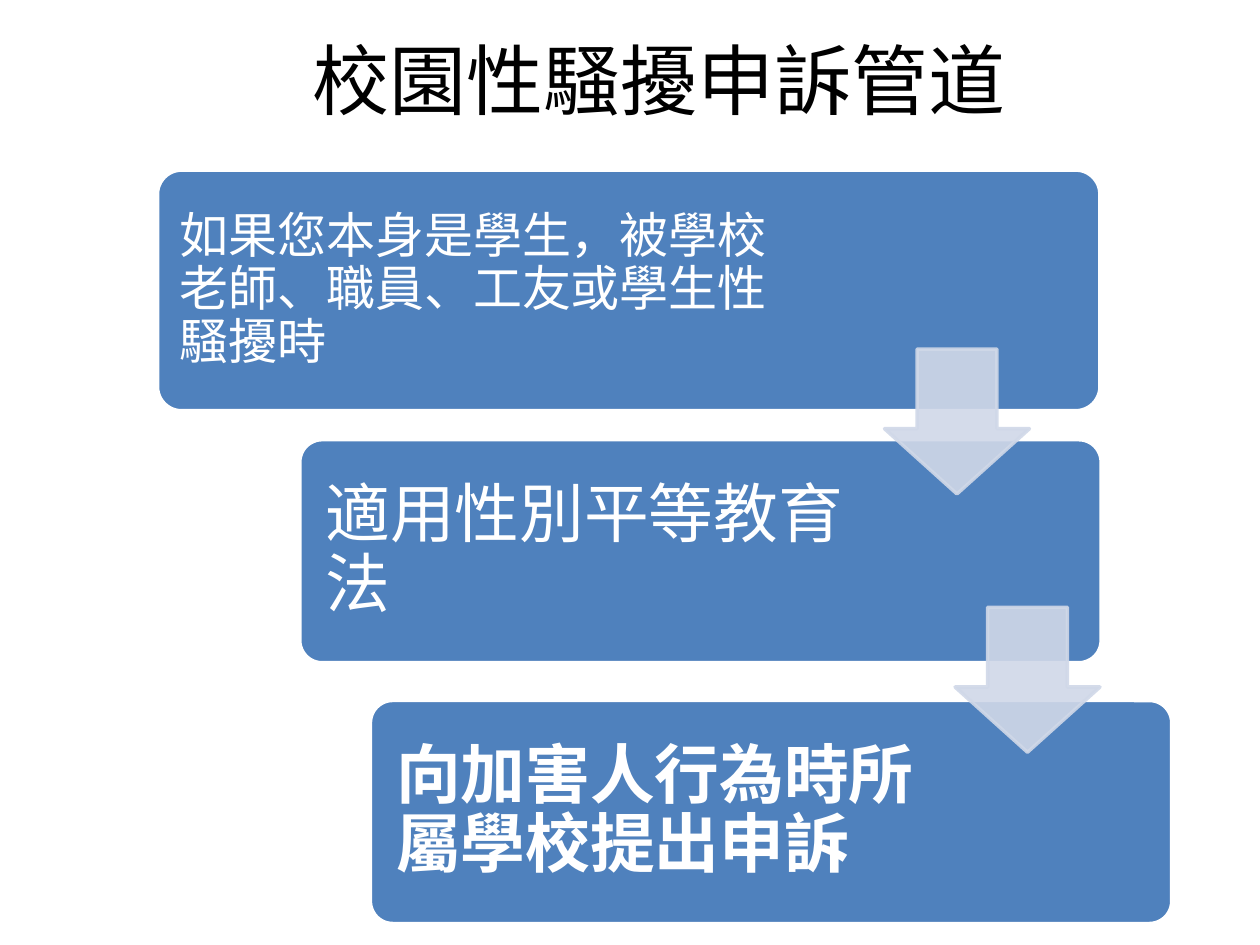
import pptx
import pptx.util
import pptx.dml.color
import pptx.enum.shapes
import pptx.enum.text
import pptx.oxml
import pptx.oxml.ns
import lxml.etree

COLUMNS, ROWS = 100, 75
CELL = pptx.util.Inches(0.1)
FONT = "Noto Sans CJK SC"
COLOURS = {"title": "000000", "step": "4F81BD", "white": "FFFFFF", "arrow": "D0D8E8"}
ARROW_SIZE = 11.5
TEXT_MARGIN = 0.55

STEPS = [
    {"text": "如果您本身是學生，被學校老師、職員、工友或學生性騷擾時",
     "area": (12.5, 13.5, 74.8, 19.1), "text_width": 52.4, "size": 28, "inset": 1.2, "bold": False},
    {"text": "適用性別平等教育法",
     "area": (23.8, 34.9, 63.6, 17.7), "text_width": 45.4, "size": 37, "inset": 1.5, "bold": False},
    {"text": "向加害人行為時所屬學校提出申訴",
     "area": (29.4, 55.6, 63.6, 17.7), "text_width": 45.4, "size": 37, "inset": 1.5, "bold": True},
]
ARROWS = [(70.2, 27.7), (75.8, 48.2)]


def grid(*cells):
    return [round(cell * CELL) for cell in cells]


def colour(name):
    return pptx.dml.color.RGBColor.from_string(COLOURS[name])


def format_text(para, size, colour_name, bold=False):
    for span in para.runs:
        span.font.size = pptx.util.Pt(size)
        span.font.name = FONT
        span.font.bold = bold
        span.font.color.rgb = colour(colour_name)
        east_asian = lxml.etree.Element(pptx.oxml.ns.qn("a:ea"), typeface=FONT)
        span.font._element.find(pptx.oxml.ns.qn("a:latin")).addnext(east_asian)


def set_opacity(shape, percent):
    for fill in shape._element.spPr.iter(pptx.oxml.ns.qn("a:srgbClr")):
        lxml.etree.SubElement(fill, pptx.oxml.ns.qn("a:alpha"), val=str(percent * 1000))


def add_title(page, text):
    title = page.shapes.title
    title.left, title.top, title.width, title.height = grid(9.8, 0, 85, 12.5)
    title.text_frame.text = text
    title.text_frame.vertical_anchor = pptx.enum.text.MSO_ANCHOR.MIDDLE
    para = title.text_frame.paragraphs[0]
    para.alignment = pptx.enum.text.PP_ALIGN.CENTER
    format_text(para, 44, "title")


def add_preset(group, preset, area, adjustments, fill_name, line_name):
    shape = group.shapes.add_shape(preset, *grid(*area))
    shape.shadow.inherit = False
    for index, value in enumerate(adjustments):
        shape.adjustments[index] = value
    shape.fill.solid()
    shape.fill.fore_color.rgb = colour(fill_name)
    shape.line.color.rgb = colour(line_name)
    shape.line.width = pptx.util.Pt(2)
    return shape


def add_step(group, step):
    left, top, width, height = step["area"]
    add_preset(group, pptx.enum.shapes.MSO_SHAPE.ROUNDED_RECTANGLE,
               step["area"], [0.1], "step", "white")
    box = group.shapes.add_textbox(*grid(
        left + TEXT_MARGIN, top + TEXT_MARGIN, step["text_width"], height - 2 * TEXT_MARGIN))
    frame = box.text_frame
    frame.word_wrap = True
    frame.vertical_anchor = pptx.enum.text.MSO_ANCHOR.MIDDLE
    inset = grid(step["inset"])[0]
    frame.margin_left = frame.margin_right = frame.margin_top = frame.margin_bottom = inset
    frame.text = step["text"]
    para = frame.paragraphs[0]
    para.line_spacing = 0.9
    format_text(para, step["size"], "white", step["bold"])


def add_arrow(group, left, top):
    arrow = add_preset(group, pptx.enum.shapes.MSO_SHAPE.DOWN_ARROW,
                       (left, top, ARROW_SIZE, ARROW_SIZE), [0.55, 0.45], "arrow", "arrow")
    set_opacity(arrow, 90)


def main():
    deck = pptx.Presentation()
    deck.slide_width, deck.slide_height = grid(COLUMNS, ROWS)
    page = deck.slides.add_slide(deck.slide_layouts[5])
    add_title(page, "校園性騷擾申訴管道")
    flow = page.shapes.add_group_shape()
    for step in STEPS:
        add_step(flow, step)
    for left, top in ARROWS:
        add_arrow(flow, left, top)
    deck.save("out.pptx")


if __name__ == "__main__":
    main()
